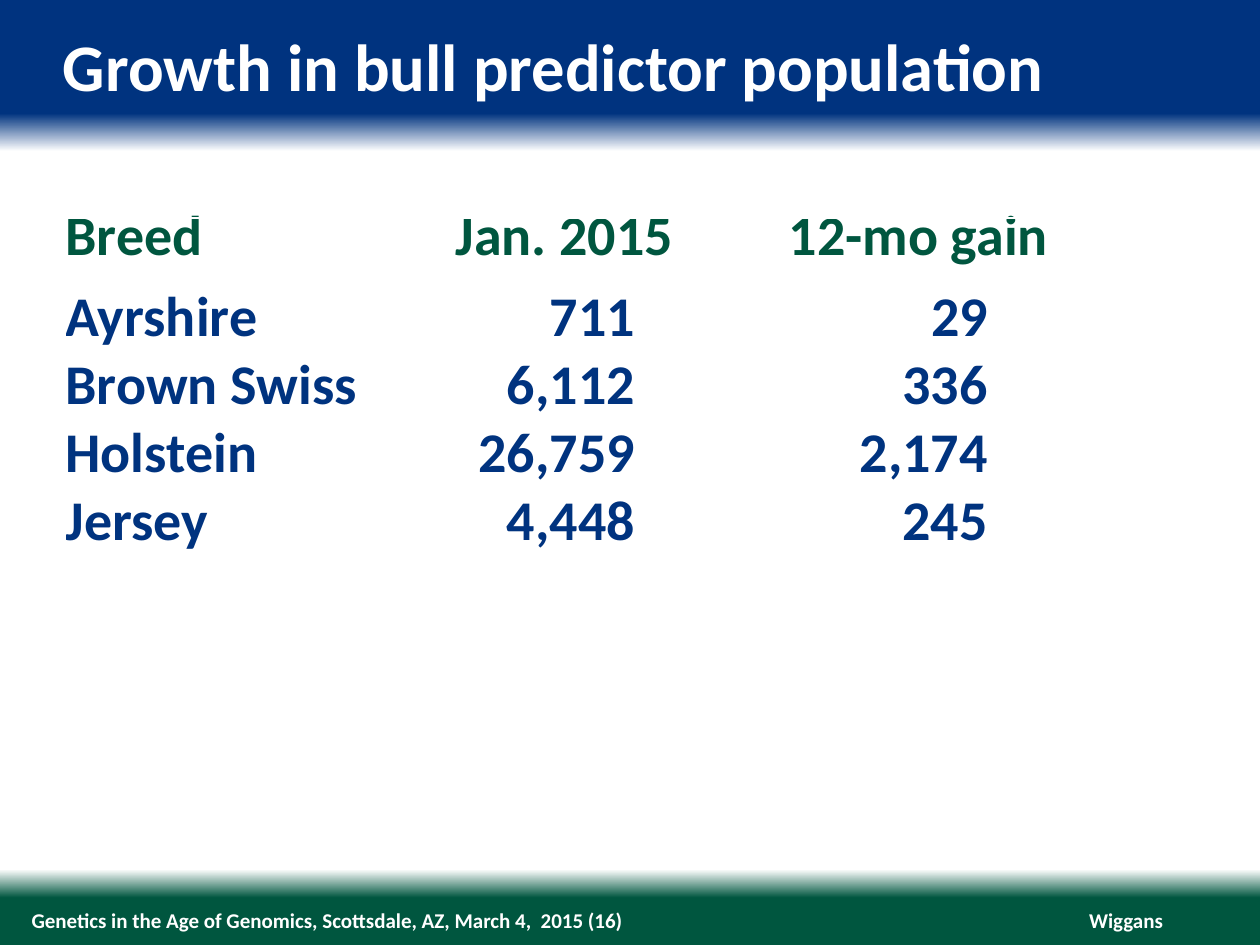
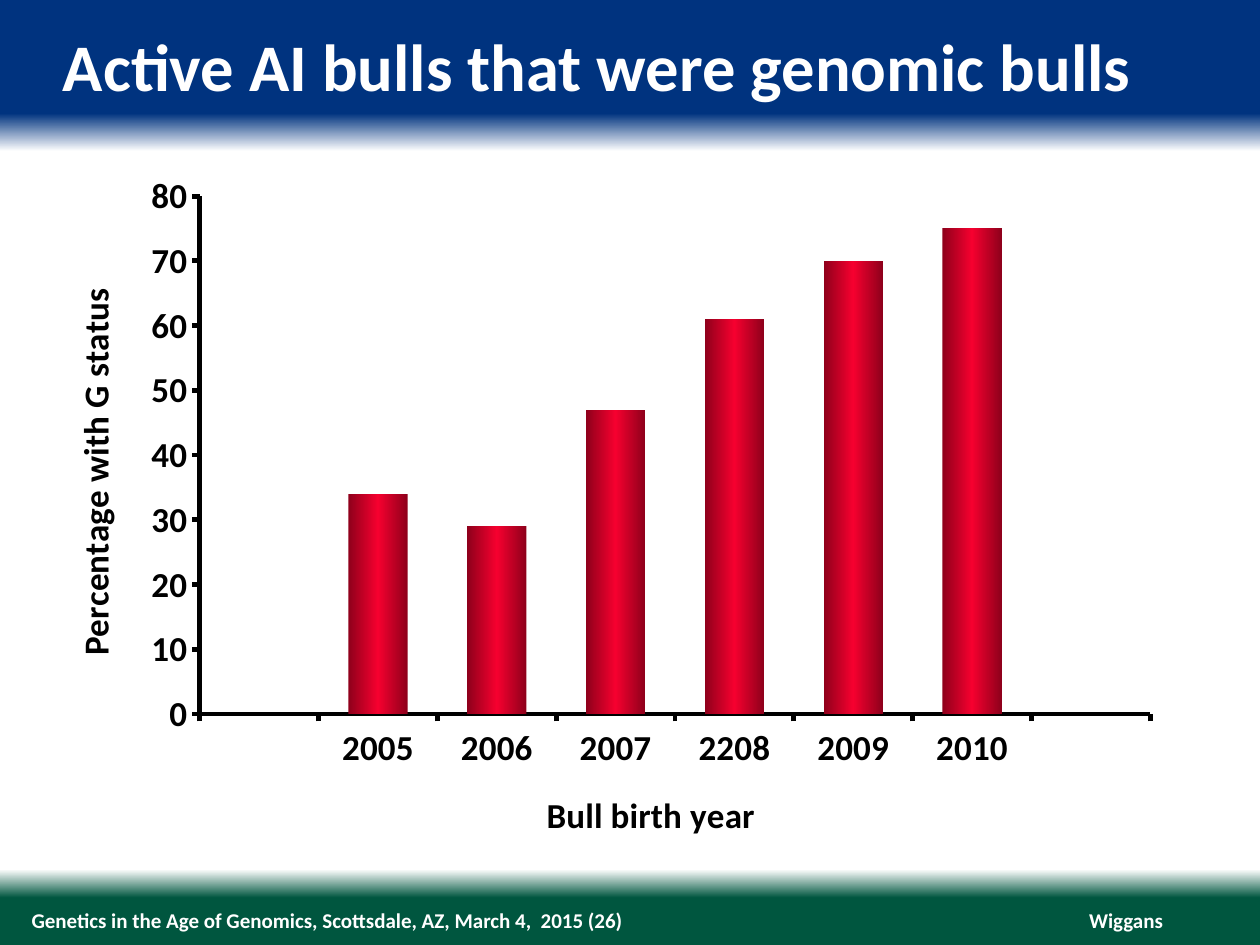
from dataclasses import dataclass
from typing import NamedTuple, Optional

import lxml.etree
import pptx
import pptx.chart.data
import pptx.dml.color
import pptx.enum.chart
import pptx.enum.text
import pptx.oxml.ns
import pptx.util

Inches = pptx.util.Inches
Pt = pptx.util.Pt
Align = pptx.enum.text.PP_ALIGN
Anchor = pptx.enum.text.MSO_ANCHOR
qn = pptx.oxml.ns.qn


@dataclass(frozen=True)
class Theme:
    font: str = "Calibri"
    blue: str = "00337F"
    green: str = "00563F"
    white: str = "FFFFFF"
    black: str = "000000"
    dark_red: str = "8E001B"
    red: str = "F6002F"
    title_size: float = 38
    table_size: float = 32
    chart_size: float = 20
    footer_size: float = 12
    axis_width: float = 2.75


class Stop(NamedTuple):
    percent: int
    color: str


class Column(NamedTuple):
    width: float
    head_align: Align
    head_right: float
    body_align: Align
    body_right: float


class Row(NamedTuple):
    height: float
    cells: tuple[str, ...]
    top: float = 0


THEME = Theme()
FOOTER = "Genetics in the Age of Genomics, Scottsdale, AZ, March 4,  2015 ({})"
SPEAKER = "Wiggans"

BACKGROUND = (
    Stop(0, THEME.blue), Stop(12, THEME.blue), Stop(16, THEME.white),
    Stop(92, THEME.white), Stop(95, THEME.green), Stop(100, THEME.green),
)
BAR_FILL = (Stop(0, THEME.dark_red), Stop(50, THEME.red), Stop(100, THEME.dark_red))

BREED_COLUMNS = (
    Column(2.35, Align.LEFT, 0, Align.LEFT, 0),
    Column(3.37, Align.CENTER, 0.15, Align.RIGHT, 1.2),
    Column(2.1, Align.CENTER, 0, Align.RIGHT, 0.5),
)
BREED_ROWS = (
    Row(0.42, ("Breed", "Jan. 2015", "12-mo gain")),
    Row(0.64, ("Ayrshire", "711", "29"), top=0.1),
    Row(0.54, ("Brown Swiss", "6,112", "336")),
    Row(0.54, ("Holstein", "26,759", "2,174")),
    Row(0.54, ("Jersey", "4,448", "245")),
)

BIRTH_YEARS = ("", "2005", "2006", "2007", "2208", "2009", "2010", "")
G_STATUS = (None, 34, 29, 47, 61, 70, 75, None)


# Shared formatting
def rgb(color: str) -> pptx.dml.color.RGBColor:
    return pptx.dml.color.RGBColor.from_string(color)


def set_font(font, size: float, color: str) -> None:
    font.name = THEME.font
    font.size = Pt(size)
    font.bold = True
    font.color.rgb = rgb(color)


def write(tf, text: str, *, size: float, color: str, align=Align.LEFT,
          line: Optional[float] = None) -> None:
    p = tf.paragraphs[0]
    p.alignment = align
    if line is not None:
        p.line_spacing = Pt(line)
    r = p.add_run()
    r.text = text
    set_font(r.font, size, color)


def set_gradient(fill, owner, stops: tuple[Stop, ...], angle: float) -> None:
    fill.gradient()
    fill.gradient_angle = angle
    gs_list = next(owner.iter(qn("a:gsLst")))
    for gs in list(gs_list):
        gs_list.remove(gs)
    for stop in stops:
        gs = lxml.etree.SubElement(gs_list, qn("a:gs"), pos=str(stop.percent * 1000))
        lxml.etree.SubElement(gs, qn("a:srgbClr"), val=stop.color)


def add_text(s, text: str, left: float, top: float, width: float, height: float, *,
             size: float, color: str = THEME.white, align=Align.LEFT,
             anchor=Anchor.TOP, wrap: bool = True) -> None:
    sp = s.shapes.add_textbox(Inches(left), Inches(top), Inches(width), Inches(height))
    tf = sp.text_frame
    tf.margin_left = tf.margin_top = tf.margin_right = tf.margin_bottom = 0
    tf.word_wrap = wrap
    tf.vertical_anchor = anchor
    tf.auto_size = pptx.enum.text.MSO_AUTO_SIZE.SHAPE_TO_FIT_TEXT
    write(tf, text, size=size, color=color, align=align)


def add_slide(prs, title: str, number: int):
    s = prs.slides.add_slide(prs.slide_layouts[6])
    add_text(s, SPEAKER, 8.64, 7.2, 0.59, 0.2, size=THEME.footer_size,
             align=Align.RIGHT, anchor=Anchor.MIDDLE, wrap=False)
    add_text(s, FOOTER.format(number), 0.25, 7.2, 7.42, 0.2,
             size=THEME.footer_size, anchor=Anchor.MIDDLE)
    add_text(s, title, 0.5, 0.2, 9, 0.64, size=THEME.title_size)
    return s


# Breed table
def add_breed_table(s) -> None:
    width = sum(col.width for col in BREED_COLUMNS)
    height = sum(row.height for row in BREED_ROWS)
    table = s.shapes.add_table(len(BREED_ROWS), len(BREED_COLUMNS), Inches(0.52),
                               Inches(1.73), Inches(width), Inches(height)).table
    table.first_row = table.horz_banding = False
    for c, col in enumerate(BREED_COLUMNS):
        table.columns[c].width = Inches(col.width)
    for i, row in enumerate(BREED_ROWS):
        table.rows[i].height = Inches(row.height)
        head = i == 0
        for c, (col, text) in enumerate(zip(BREED_COLUMNS, row.cells)):
            cell = table.cell(i, c)
            cell.fill.background()
            cell.vertical_anchor = Anchor.BOTTOM
            cell.margin_left = cell.margin_bottom = 0
            cell.margin_top = Inches(row.top if c == 0 else 0)
            cell.margin_right = Inches(col.head_right if head else col.body_right)
            write(cell.text_frame, text, size=THEME.table_size,
                  color=THEME.green if head else THEME.blue,
                  align=col.head_align if head else col.body_align,
                  line=30 if head else None)


# Genomic bull chart
def format_axis(axis, title: str) -> None:
    axis.has_major_gridlines = False
    axis.major_tick_mark = pptx.enum.chart.XL_TICK_MARK.OUTSIDE
    axis.minor_tick_mark = pptx.enum.chart.XL_TICK_MARK.NONE
    axis.format.line.color.rgb = rgb(THEME.black)
    axis.format.line.width = Pt(THEME.axis_width)
    set_font(axis.tick_labels.font, THEME.chart_size, THEME.black)
    write(axis.axis_title.text_frame, title, size=THEME.chart_size,
          color=THEME.black, align=Align.CENTER)


def set_plot_area(chart, x: float, y: float, w: float, h: float) -> None:
    plot_area = next(chart.element.iter(qn("c:plotArea")))
    for old in plot_area.findall(qn("c:layout")):
        plot_area.remove(old)
    layout = lxml.etree.Element(qn("c:layout"))
    manual = lxml.etree.SubElement(layout, qn("c:manualLayout"))
    settings = {"layoutTarget": "inner", "xMode": "edge", "yMode": "edge",
                "x": x, "y": y, "w": w, "h": h}
    for tag, value in settings.items():
        lxml.etree.SubElement(manual, qn(f"c:{tag}"), val=str(value))
    plot_area.insert(0, layout)


def add_bull_chart(s) -> None:
    data = pptx.chart.data.CategoryChartData()
    data.categories = BIRTH_YEARS
    data.add_series("Series 1", G_STATUS)
    chart = s.shapes.add_chart(
        pptx.enum.chart.XL_CHART_TYPE.COLUMN_CLUSTERED,
        Inches(0.39), Inches(1.34), Inches(9.2), Inches(5.41), data).chart
    chart.has_legend = chart.has_title = False
    set_font(chart.font, THEME.chart_size, THEME.black)
    format_axis(chart.category_axis, "Bull birth year")
    format_axis(chart.value_axis, "Percentage with G status")
    chart.value_axis.minimum_scale = 0
    chart.value_axis.maximum_scale = 80
    chart.value_axis.major_unit = 10
    plot = chart.plots[0]
    plot.gap_width = 100
    plot.vary_by_categories = False
    series = plot.series[0]
    owner = next(chart.element.iter(qn("c:ser")))
    set_gradient(series.format.fill, owner, BAR_FILL, 0)
    set_plot_area(chart, 0.13, 0.04, 0.82, 0.76)


def main() -> None:
    prs = pptx.Presentation()
    prs.slide_width, prs.slide_height = Inches(10), Inches(7.5)
    master = prs.slide_master
    set_gradient(master.background.fill, master.element, BACKGROUND, 270)

    add_breed_table(add_slide(prs, "Growth in bull predictor population", 16))
    add_bull_chart(add_slide(prs, "Active AI bulls that were genomic bulls", 26))
    prs.save("out.pptx")


if __name__ == "__main__":
    main()
